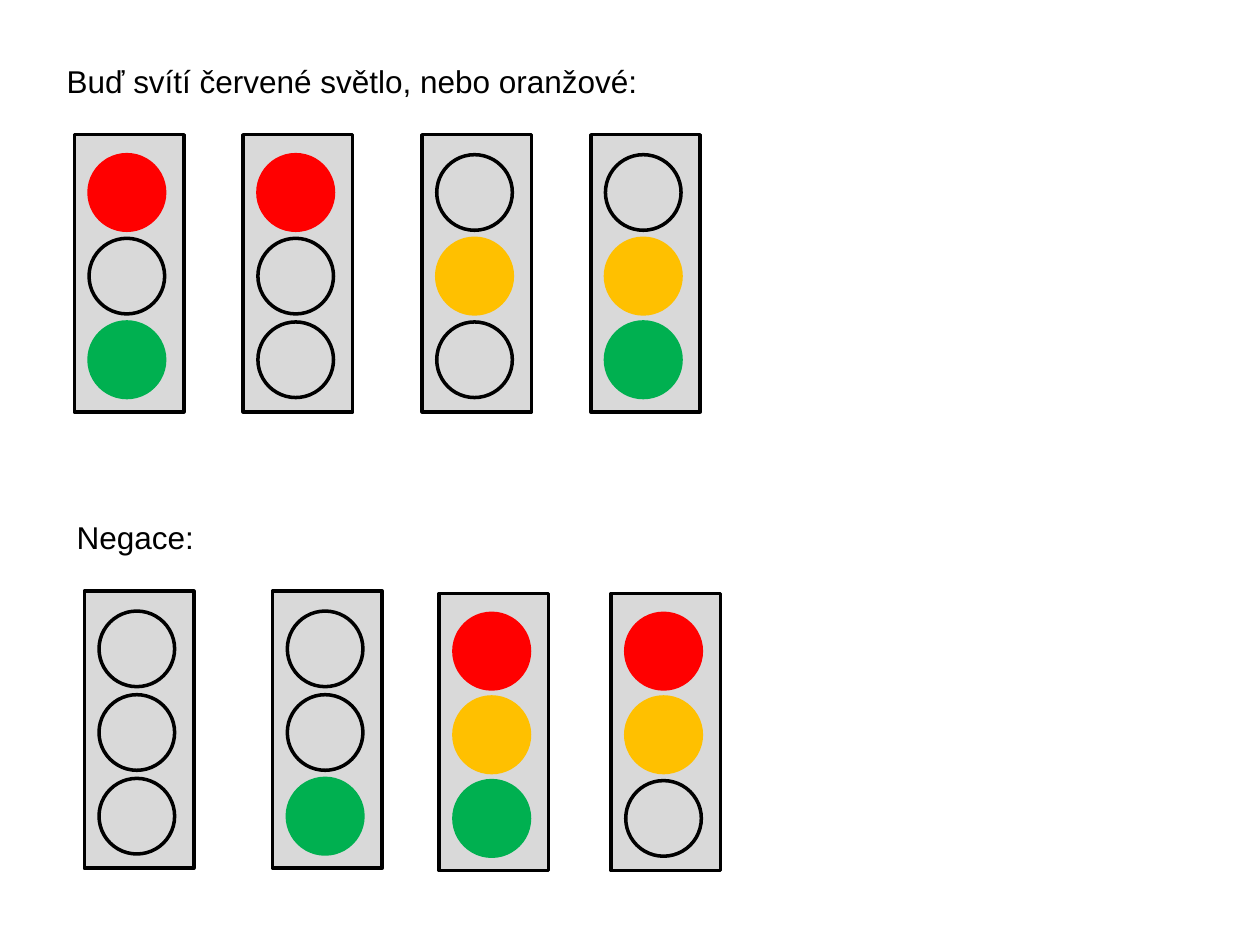
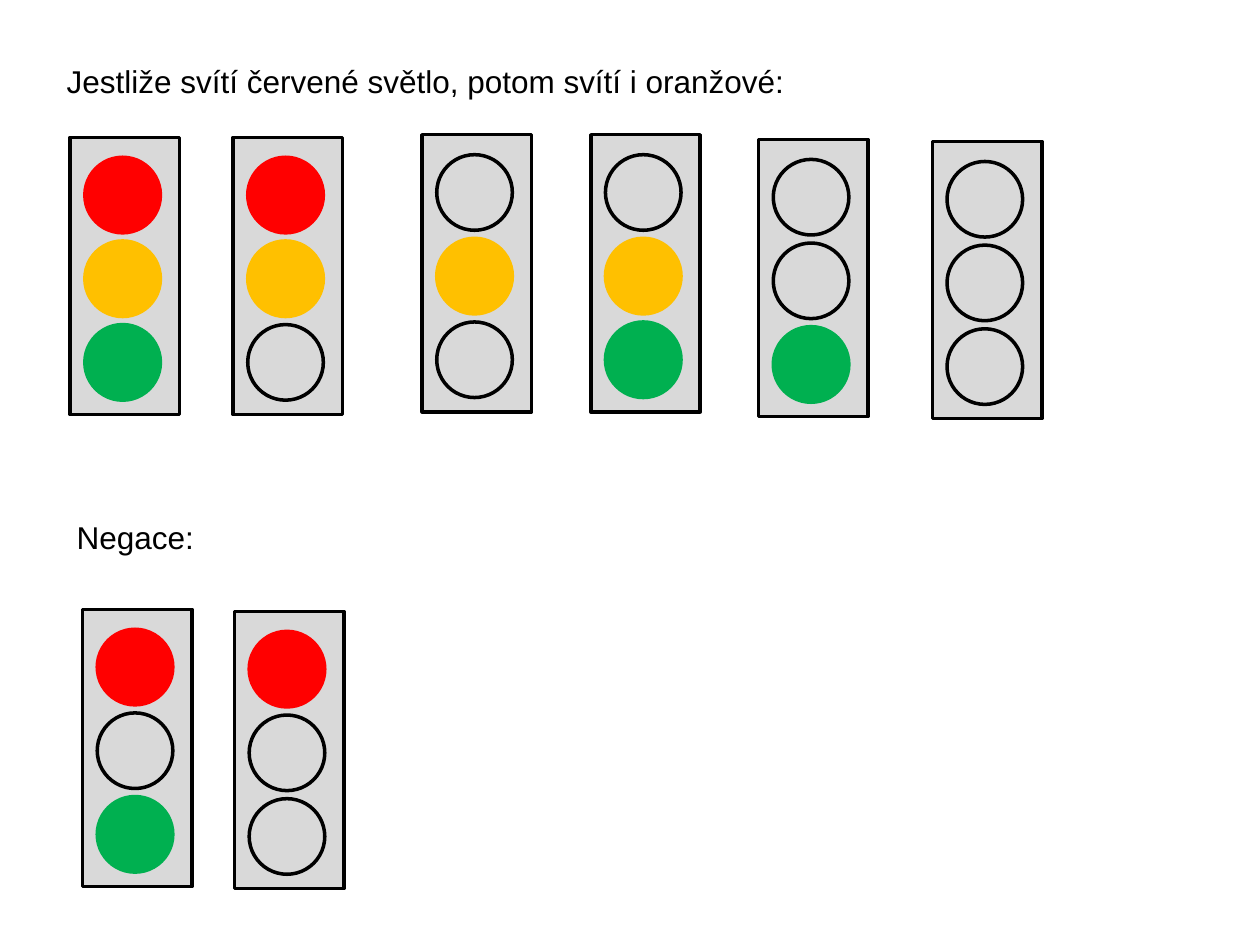
import pptx
import pptx.dml.color
import pptx.enum.shapes
import pptx.enum.text
import pptx.util

Pt = pptx.util.Pt
SHAPE = pptx.enum.shapes.MSO_SHAPE

COLORS = {
    "housing": "D9D9D9",
    "ink": "000000",
    "red": "FF0000",
    "orange": "FFC000",
    "green": "00B050",
}
LAMPS = ["red", "orange", "green"]  # from top to bottom

# Traffic light measures in points
HOUSING_WIDTH, HOUSING_HEIGHT = 62.6, 158.4
LAMP_SIZE, LAMP_PITCH = 43.2, 47.8
LAMP_LEFT, LAMP_TOP = 8.4, 11.4


def add_text(page, text, left, top, width, height=28.8, size=18, font="Arial", color="ink"):
    box = page.shapes.add_textbox(Pt(left), Pt(top), Pt(width), Pt(height))
    frame = box.text_frame
    frame.word_wrap = False
    frame.auto_size = pptx.enum.text.MSO_AUTO_SIZE.SHAPE_TO_FIT_TEXT
    span = frame.paragraphs[0].add_run()
    span.text = text
    span.font.size = Pt(size)
    span.font.name = font
    span.font.color.rgb = pptx.dml.color.RGBColor.from_string(COLORS[color])


def add_part(group, kind, left, top, width, height, fill, line):
    part = group.shapes.add_shape(kind, Pt(left), Pt(top), Pt(width), Pt(height))
    part.shadow.inherit = False
    if fill:
        part.fill.solid()
        part.fill.fore_color.rgb = pptx.dml.color.RGBColor.from_string(COLORS[fill])
    else:
        part.fill.background()
    part.line.color.rgb = pptx.dml.color.RGBColor.from_string(COLORS[line])
    part.line.width = Pt(2)


# Each page: statement, its text width, and lights as (left, top, lit lamps)
PAGES = [
    ("Buď svítí červené světlo, nebo oranžové:", 344.2, [
        (42.5, 77, ["red", "green"]),
        (139, 77, ["red"]),
        (241.2, 77, ["orange"]),
        (337.6, 77, ["orange", "green"]),
        # Negation
        (48.2, 337.8, []),
        (155.8, 337.8, ["green"]),
        (251, 339.1, ["red", "orange", "green"]),
        (349.2, 339.1, ["red", "orange"]),
    ]),
    ("Jestliže svítí červené světlo, potom svítí i oranžové:", 433.4, [
        (40.1, 78.5, ["red", "orange", "green"]),
        (133.2, 78.5, ["red", "orange"]),
        (241.2, 77, ["orange"]),
        (337.6, 77, ["orange", "green"]),
        (433.5, 79.7, ["green"]),
        (532.8, 80.9, []),
        # Negation
        (47.2, 348.2, ["red", "green"]),
        (134, 349.4, ["red"]),
    ]),
]

deck = pptx.Presentation()
deck.slide_width, deck.slide_height = Pt(720), Pt(540)

for statement, statement_width, lights in PAGES:
    page = deck.slides.add_slide(deck.slide_layouts[6])

    # Headings
    add_text(page, statement, 31, 31.7, statement_width)
    add_text(page, "Negace:", 36.7, 292.3, 81.4)

    # Traffic lights, one group each
    for left, top, lit in lights:
        light = page.shapes.add_group_shape()
        add_part(light, SHAPE.RECTANGLE, left, top, HOUSING_WIDTH, HOUSING_HEIGHT,
                 "housing", "ink")
        for row, lamp in enumerate(LAMPS):
            fill, line = (lamp, lamp) if lamp in lit else (None, "ink")
            add_part(light, SHAPE.OVAL, left + LAMP_LEFT, top + LAMP_TOP + row * LAMP_PITCH,
                     LAMP_SIZE, LAMP_SIZE, fill, line)

deck.save("out.pptx")
